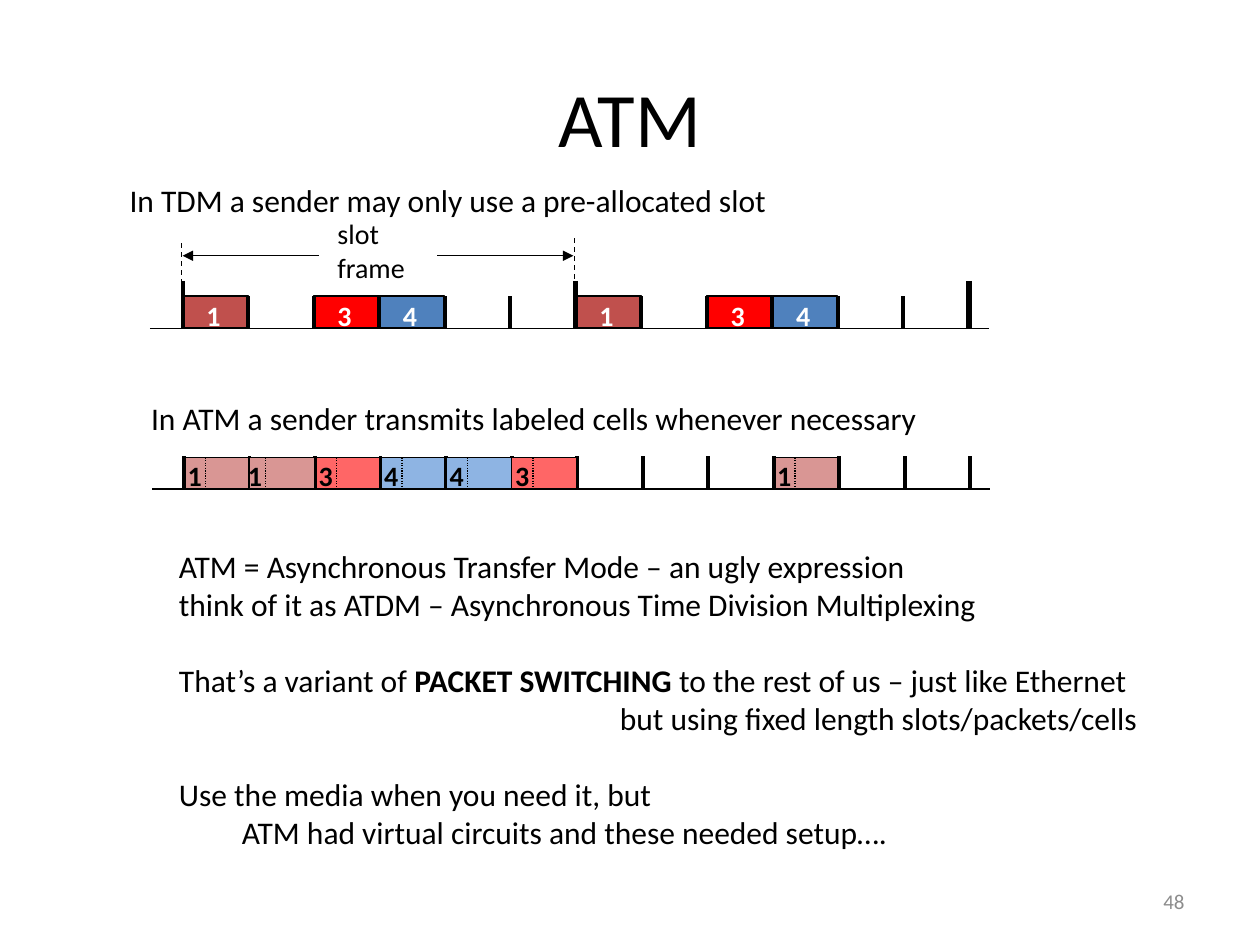
from pptx import Presentation
from pptx.dml.color import RGBColor
from pptx.enum.dml import MSO_LINE
from pptx.enum.shapes import MSO_CONNECTOR, MSO_SHAPE
from pptx.enum.text import MSO_ANCHOR, MSO_AUTO_SIZE, PP_ALIGN
from pptx.oxml.ns import qn
from pptx.util import Inches, Pt
from lxml.etree import SubElement

COLORS = {
    "black": "000000", "white": "FFFFFF", "gray": "8C8C8C",
    "brick": "C0504D", "red": "FF0000", "blue": "4F81BD",
    "light_brick": "D99694", "light_red": "FF6666", "light_blue": "8EB4E3",
}
TDM_FILLS = {"1": "brick", "3": "red", "4": "blue"}
ATM_FILLS = {"1": "light_brick", "3": "light_red", "4": "light_blue"}
FONT = "Calibri"
PITCH, CELL_H, SLOTS = 0.52, 0.25, 12


def rgb(name):
    return RGBColor.from_string(COLORS[name])


def set_font(p, size, color="black", bold=None):
    p.font.name, p.font.size, p.font.bold = FONT, Pt(size), bold
    p.font.color.rgb = rgb(color)


def place(sp, x, y, w, h):
    sp.left, sp.top, sp.width, sp.height = (Inches(v) for v in (x, y, w, h))


def add_line(s, x1, y1, x2, y2, width=0.75, dash=None, arrow=False):
    line = s.shapes.add_connector(
        MSO_CONNECTOR.STRAIGHT, Inches(x1), Inches(y1), Inches(x2), Inches(y2))
    line.line.color.rgb = rgb("black")
    line.line.width = Pt(width)
    if dash:
        line.line.dash_style = dash
    sp_pr = line._element.spPr
    if arrow:
        SubElement(sp_pr.find(qn("a:ln")), qn("a:tailEnd"), type="triangle")
    SubElement(sp_pr, qn("a:effectLst"))


def add_text(s, x, y, w, h, lines, size, color="black", bold=None, wrap=True):
    sp = s.shapes.add_textbox(Inches(x), Inches(y), Inches(w), Inches(h))
    tf = sp.text_frame
    tf.word_wrap = wrap
    tf.text = "\n".join(lines)
    for p in tf.paragraphs:
        set_font(p, size, color, bold)
    return tf


def add_cell(s, x, y, fill):
    sp = s.shapes.add_shape(
        MSO_SHAPE.RECTANGLE, Inches(x), Inches(y), Inches(PITCH), Inches(CELL_H))
    sp.shadow.inherit = False
    sp.fill.solid()
    sp.fill.fore_color.rgb = rgb(fill)
    sp.line.color.rgb = rgb("black")
    sp.line.width = Pt(0.75)


def add_label(s, x, y, text, color):
    add_text(s, x, y, 0.33, 0.37, [text], 16, color, True, wrap=False)


def add_ticks(s, x, y, slots):
    for slot in slots:
        add_line(s, x + slot * PITCH, y, x + slot * PITCH, y + 0.26, 2.25)


def add_frame_span(s, x, y, w):
    for edge, top in ((x - 0.01, y + 0.04), (x + w - 0.01, y)):
        add_line(s, edge, top, edge, top + 0.34, dash=MSO_LINE.DASH)
    mid = y + 0.14
    add_line(s, x + 2.02, mid, x + w - 0.02, mid, arrow=True)
    add_line(s, x + 1.08, mid, x, mid, arrow=True)
    add_text(s, x + 1.13, y - 0.22, 0.78, 0.64, ["slot", "frame"], 16, wrap=False)


def add_tdm(s, x, y):
    frames = (0, SLOTS // 2, SLOTS)
    add_line(s, x - 0.26, y + 0.26, x + 6.4, y + 0.26)
    for start in frames[:2]:
        for offset, label in ((0, "1"), (2, "3"), (3, "4")):
            left = x + (start + offset) * PITCH
            add_cell(s, left, y, TDM_FILLS[label])
            add_label(s, left + 0.09, y - 0.03, label, "white")
    add_ticks(s, x, y, [k for k in range(SLOTS) if k not in frames])
    for slot, width in zip(frames, (2.25, 3, 3)):
        add_line(s, x + slot * PITCH, y - 0.12, x + slot * PITCH, y + 0.25, width)
    add_frame_span(s, x, y - 0.46, frames[1] * PITCH)


def add_atm(s, x, y):
    cells = {0: "1", 1: "1", 2: "3", 3: "4", 4: "4", 5: "3", 9: "1"}
    above_ticks = (1, 4, 5)
    add_line(s, x - 0.25, y + 0.25, x + 6.4, y + 0.25)
    for slot, label in cells.items():
        if slot not in above_ticks:
            add_cell(s, x + slot * PITCH, y, ATM_FILLS[label])
    add_ticks(s, x, y - 0.01, range(SLOTS + 1))
    for slot in above_ticks:
        add_cell(s, x + slot * PITCH, y, ATM_FILLS[cells[slot]])
    for slot, label in cells.items():
        left = x + slot * PITCH - (0.04 if slot == 1 else 0)
        add_label(s, left - 0.07, y - 0.04, label, "black")
        add_line(s, left + 0.17, y, left + 0.17, y + 0.26, dash=MSO_LINE.ROUND_DOT)


def add_notes(sp, x, y, w, h):
    place(sp, x, y, w, h)
    tf = sp.text_frame
    tf.auto_size = MSO_AUTO_SIZE.NONE
    lines = (
        (["ATM = Asynchronous Transfer Mode – an ugly expression"], 0, 0),
        (["think of it as ATDM – Asynchronous Time Division Multiplexing"], 0, 0),
        (["That’s a variant of ", "PACKET SWITCHING",
          " to the rest of us – just like Ethernet"], 0, 22),
        (["but using fixed length slots/packets/cells"], 3.5, 0),
        (["Use the media when you need it, but"], 0, 22),
        (["ATM had virtual circuits and these needed setup…."], 0.5, 0),
    )
    for i, (parts, indent, gap) in enumerate(lines):
        p = tf.add_paragraph() if i else tf.paragraphs[0]
        set_font(p, 18)
        p.space_before = Pt(gap)
        p_pr = p._p.get_or_add_pPr()
        p_pr.set("marL", str(Inches(indent)))
        p_pr.set("indent", "0")
        p_pr.insert_element_before(
            p_pr.makeelement(qn("a:buNone"), {}), "a:tabLst", "a:defRPr", "a:extLst")
        for j, text in enumerate(parts):
            r = p.add_run()
            r.text = text
            if j == 1:
                r.font.bold = True


def add_title(sp, x, y, w, h):
    place(sp, x, y, w, h)
    sp.text_frame.text = "ATM"
    sp.text_frame.vertical_anchor = MSO_ANCHOR.MIDDLE
    p = sp.text_frame.paragraphs[0]
    p.alignment = PP_ALIGN.CENTER
    set_font(p, 44)


def add_page_number(s, x, y, w, h):
    tf = add_text(s, x, y, w, h, ["48"], 12, "gray")
    tf.vertical_anchor = MSO_ANCHOR.MIDDLE
    tf.paragraphs[0].alignment = PP_ALIGN.RIGHT


def main():
    prs = Presentation()
    prs.slide_width, prs.slide_height = Inches(10), Inches(7.5)
    s = prs.slides.add_slide(prs.slide_layouts[1])
    add_title(s.shapes.title, 0.5, 0.3, 9, 1.25)
    add_text(s, 0.93, 1.39, 6.13, 0.4,
             ["In TDM a sender may only use a pre-allocated slot"], 18)
    add_tdm(s, 1.45, 2.35)
    add_text(s, 1.1, 3.12, 6.59, 0.4,
             ["In ATM a sender transmits labeled cells whenever necessary"], 18)
    add_atm(s, 1.46, 3.63)
    add_notes(s.placeholders[1], 1.32, 4.29, 8.59, 2.83)
    add_page_number(s, 7.17, 6.95, 2.33, 0.4)
    prs.save("out.pptx")


if __name__ == "__main__":
    main()
